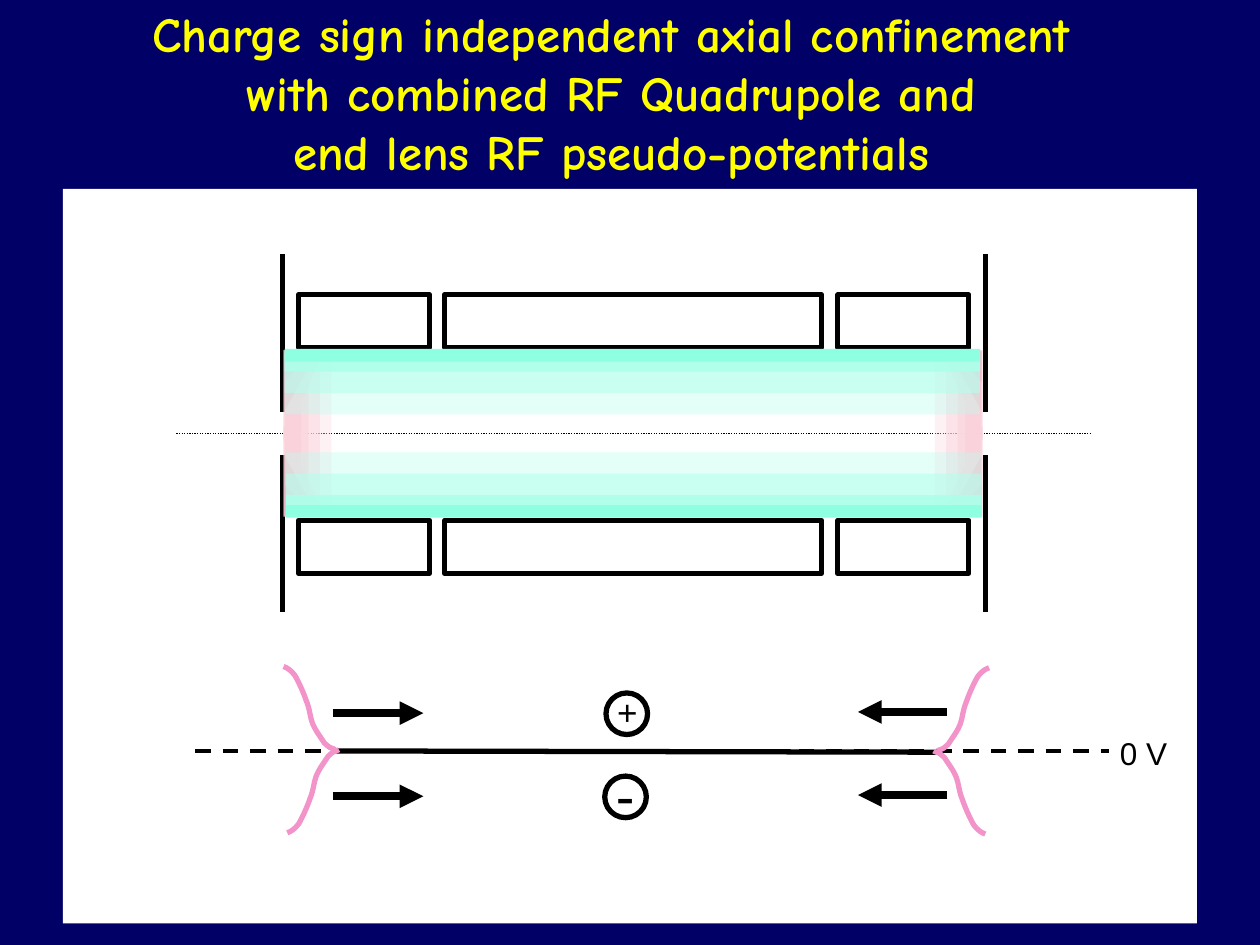
"""Build the slide on axial ion confinement between two RF end lenses."""
from lxml import etree
from pptx import Presentation
from pptx import util as u
from pptx.dml.color import RGBColor
from pptx.enum import dml, shapes, text
from pptx.oxml.ns import qn

PX = 9144
HUES = {
    "navy": "000066", "white": "FFFFFF", "black": "000000", "gold": "FFFF00",
    "curve": "F294CA", "mist": "FBD9E1", "blush": "FAD2DC", "rose": "F8C4D0",
    "pink": "F6B6C5", "mint": "B5FFEC", "aqua": "ADFFEA", "teal": "8FFFE2",
}
KINDS = shapes.MSO_SHAPE
DASH = dml.MSO_LINE
MIRROR_X, MIRROR_Y = 1005, 688
BEND = [(3, 1), (6, 3), (9, 7), (12, 12), (16, 21), (18, 27),
        (21, 34), (21, 40), (23, 45), (25, 50), (28, 54), (30, 57),
        (32, 60), (33, 62), (35, 63), (37, 65), (40, 65), (41, 66)]


def hue(name):
    """Return the named colour."""
    return RGBColor.from_string(HUES[name])


class Deck:
    """Hold the style and the current slide."""

    def __init__(self, wide, high):
        """Open a title-only slide of the given size."""
        self.prs = Presentation()
        self.prs.slide_width, self.prs.slide_height = wide * PX, high * PX
        self.slide = self.prs.slides.add_slide(self.prs.slide_layouts[5])
        self.items = self.slide.shapes
        fill = self.slide.background.fill
        fill.solid()
        fill.fore_color.rgb = hue("navy")

    def letter(self, shape, lines, size, face, color, bold=False, align=None):
        """Fill a shape with one paragraph per line."""
        frame = shape.text_frame
        frame.text = "\n".join(lines)
        frame.word_wrap = False
        frame.auto_size = text.MSO_AUTO_SIZE.NONE
        frame.vertical_anchor = text.MSO_ANCHOR.TOP
        for para in frame.paragraphs:
            para.alignment = align
            font = para.font
            font.name, font.size, font.bold = face, u.Pt(size), bold
            font.color.rgb = hue(color)

    def title(self, box, lines):
        """Place and format the title."""
        shape = self.items.title
        shape.left, shape.top, shape.width, shape.height = [v * PX for v in box]
        self.letter(shape, lines, 28, "Comic Neue", "gold", True, text.PP_ALIGN.CENTER)

    def label(self, box, words, size):
        """Add a small text label."""
        shape = self.items.add_textbox(*[v * PX for v in box])
        self.letter(shape, [words], size, "Arial", "black")

    def shape(self, box, kind=KINDS.RECTANGLE, fill=None, alpha=100, edge=0, flip=""):
        """Add a preset shape, filled or outlined."""
        item = self.items.add_shape(kind, *[v * PX for v in box])
        item.shadow.inherit = False
        if fill:
            item.fill.solid()
            item.fill.fore_color.rgb = hue(fill)
            if alpha < 100:
                tint = item.element.spPr.find(".//" + qn("a:srgbClr"))
                etree.SubElement(tint, qn("a:alpha"), val=str(alpha * 1000))
        else:
            item.fill.background()
        if edge:
            item.line.color.rgb = hue("black")
            item.line.width = u.Pt(edge)
        else:
            item.line.fill.background()
        for side in flip:
            item.element.spPr.get_or_add_xfrm().set("flip" + side, "1")

    def line(self, start, end, width, dash=None, head=False):
        """Add a straight line, with an arrowhead at its end if asked."""
        ends = [v * PX for v in (*start, *end)]
        item = self.items.add_connector(shapes.MSO_CONNECTOR.STRAIGHT, *ends)
        item.line.color.rgb = hue("black")
        item.line.width = u.Pt(width)
        if dash:
            item.line.dash_style = dash
        if head:
            edge = item.element.spPr.find(qn("a:ln"))
            etree.SubElement(edge, qn("a:tailEnd"), type="triangle")
        etree.SubElement(item.element.spPr, qn("a:effectLst"))

    def curve(self, start, sx, sy):
        """Add a potential curve bending in the given directions."""
        x, y = start
        pen = self.items.build_freeform(x, y, scale=PX)
        pen.add_line_segments([(x + sx * a, y + sy * b) for a, b in BEND], close=False)
        item = pen.convert_to_shape()
        item.shadow.inherit = False
        item.fill.background()
        item.line.color.rgb = hue("curve")
        item.line.width = u.Pt(3)
        steps = item.element.findall(".//" + qn("a:lnTo"))
        for i in range(0, len(steps), 3):
            cubic = etree.SubElement(steps[i].getparent(), qn("a:cubicBezTo"))
            for step in steps[i:i + 3]:
                cubic.append(step[0])
                step.getparent().remove(step)

    def haze(self, right):
        """Add the pink field at one end lens."""
        def place(x, wide):
            return MIRROR_X - x - wide if right else x

        for x, wide, fill, alpha in [(236, 27, "mist", 36), (237, 17, "mist", 57),
                                     (236, 9, "mist", 91), (235, 5, "mist", 100),
                                     (226, 13, "blush", 100)]:
            self.shape((place(x, wide), 278, wide, 132), fill=fill, alpha=alpha)
        side = "H" if right else ""
        for upper in (True, False):
            for x, y, wide, high, fill, alpha in [(225, 338, 33, 72, "blush", 74),
                                                  (226, 362, 26, 47, "rose", 89),
                                                  (226, 385, 22, 24, "pink", 89)]:
                top = MIRROR_Y - y - high if upper else y
                self.shape((place(x, wide), top, wide, high), KINDS.RIGHT_TRIANGLE,
                           fill, alpha, flip=side + "V" * upper)


def main():
    """Draw the slide and save it."""
    deck = Deck(1000, 750)
    deck.title((85, -2, 800, 151), ["Charge sign independent axial confinement",
                                    "with combined RF Quadrupole and",
                                    "end lens RF pseudo-potentials"])
    deck.shape((50, 150, 900, 583), fill="white")
    deck.line((140, 344), (865, 344), 0.75, DASH.ROUND_DOT)
    for top in (234, 413):
        for x, wide in [(237, 104), (665, 104), (353, 299)]:
            deck.shape((x, top, wide, 42), edge=3)
    for x in (224, 782):
        for top, low in [(202, 327), (361, 486)]:
            deck.line((x, top), (x, low), 3)

    deck.line((155, 596), (880, 596), 2.25, DASH.DASH)
    deck.line((267, 596), (743, 597), 3)
    for x, y in [(481, 550), (480, 616)]:
        deck.shape((x, y, 33, 33), KINDS.OVAL, edge=3)
    deck.label((480, 543, 36, 43), "+", 20)
    deck.label((479, 599, 35, 63), "-", 32)
    deck.label((879, 578, 58, 40), "0 V", 18)
    for y in (565, 631):
        deck.line((752, y), (681, y), 4.5, head=True)
        deck.line((264, y + 1), (336, y + 1), 4.5, head=True)

    for right in (False, True):
        deck.haze(right)
    for start, sx, sy in [((225, 529), 1, 1), ((228, 661), 1, -1),
                          ((785, 530), -1, 1), ((782, 662), -1, -1)]:
        deck.curve(start, sx, sy)
    for upper in (False, True):
        for y, high, fill, alpha in [(359, 50, "mint", 36), (376, 32, "mint", 57),
                                     (393, 15, "aqua", 91), (401, 10, "teal", 100)]:
            top = MIRROR_Y - y - high if upper else y
            deck.shape((227 - upper, top, 552, high), fill=fill, alpha=alpha)
    deck.prs.save("out.pptx")


if __name__ == "__main__":
    main()
